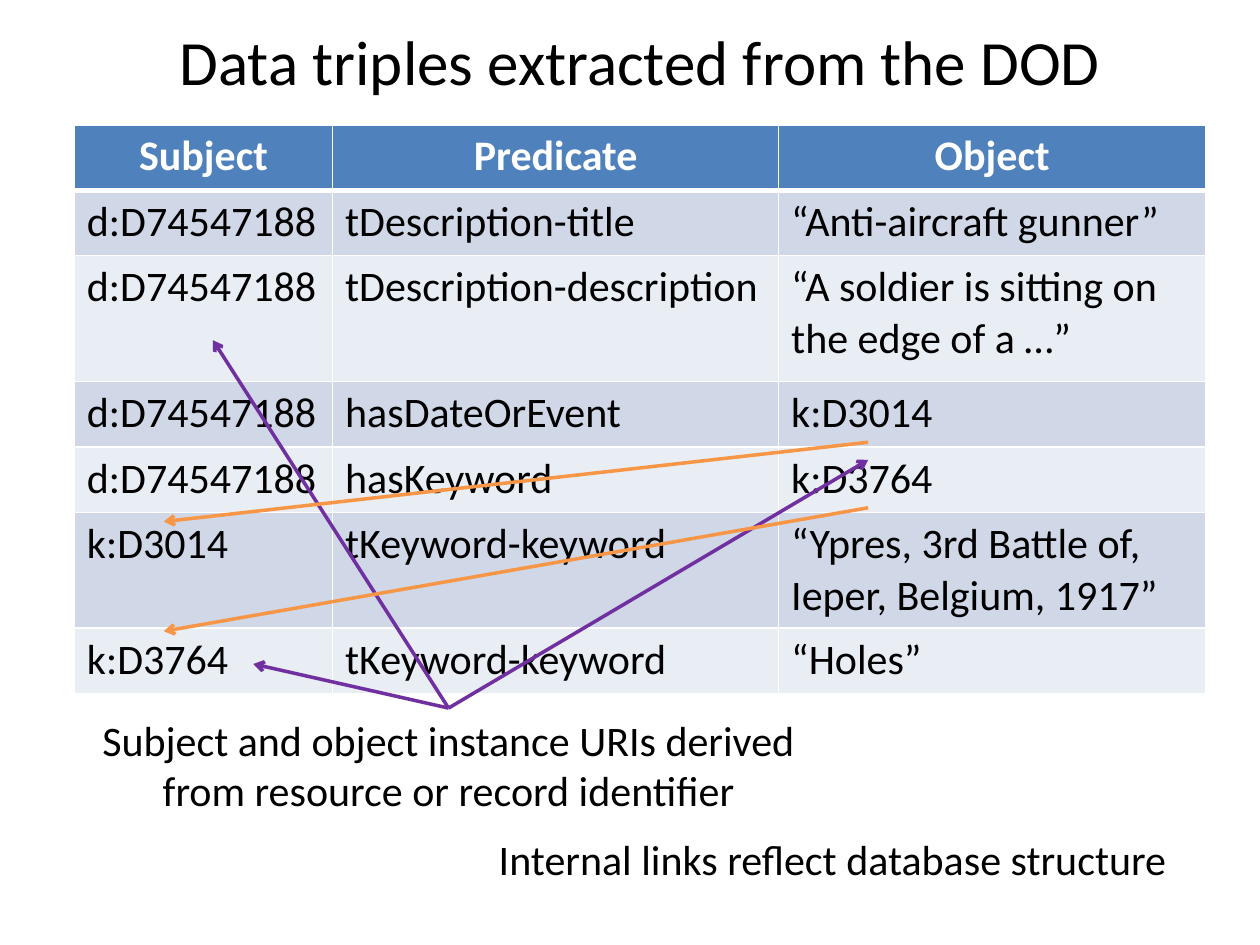
import pptx
import pptx.util
import pptx.dml.color
import pptx.enum.shapes
import pptx.enum.text
import pptx.oxml
import pptx.oxml.ns

Inches = pptx.util.Inches
Pt = pptx.util.Pt
RGBColor = pptx.dml.color.RGBColor
Align = pptx.enum.text.PP_ALIGN

WHITE = RGBColor(0xFF, 0xFF, 0xFF)
BLACK = RGBColor(0, 0, 0)
BLUE = RGBColor(0x4F, 0x81, 0xBD)
BANDS = (RGBColor(0xD0, 0xD8, 0xE8), RGBColor(0xE9, 0xED, 0xF4))
PURPLE = RGBColor(0x70, 0x30, 0xA0)
ORANGE = RGBColor(0xF7, 0x96, 0x46)
FONT = "Calibri"

WIDTHS = (2.05, 3.54, 3.39)
HEIGHTS = (0.52, 0.52, 1, 0.52, 0.52, 0.52, 0.52)
ITEM = "d:D74547188"
ROWS = (
    ("Subject", "Predicate", "Object"),
    (ITEM, "tDescription-title", "“Anti-aircraft gunner”"),
    (ITEM, "tDescription-description", "“A soldier is sitting on the edge of a …”"),
    (ITEM, "hasDateOrEvent", "k:D3014"),
    (ITEM, "hasKeyword", "k:D3764"),
    ("k:D3014", "tKeyword-keyword", "“Ypres, 3rd Battle of, Ieper, Belgium, 1917”"),
    ("k:D3764", "tKeyword-keyword", "“Holes”"),
)


def write(frame, text, size, color=BLACK, align=Align.LEFT, bold=False):
    par = frame.paragraphs[0]
    par.alignment = align
    run = par.add_run()
    run.text = text
    font = run.font
    font.name, font.size, font.bold = FONT, Pt(size), bold
    font.color.rgb = color


def add_text(slide, box, text, size, align=Align.CENTER, wrap=True):
    shape = slide.shapes.add_textbox(*map(Inches, box))
    frame = shape.text_frame
    frame.word_wrap = wrap
    frame.auto_size = pptx.enum.text.MSO_AUTO_SIZE.SHAPE_TO_FIT_TEXT
    write(frame, text, size, align=align)


def add_edges(cell, base):
    """White rules round a cell; base is the width of the bottom one."""
    props = cell._tc.get_or_add_tcPr()
    for side, width in (("L", 1), ("R", 1), ("T", 1), ("B", base)):
        props.append(pptx.oxml.parse_xml(
            f'<a:ln{side} {pptx.oxml.ns.nsdecls("a")} w="{Pt(width)}">'
            f'<a:solidFill><a:srgbClr val="{WHITE}"/></a:solidFill></a:ln{side}>'))


def add_triples(slide, box):
    frame = slide.shapes.add_table(len(ROWS), len(WIDTHS), *map(Inches, box))
    table = frame.table
    for col, width in zip(table.columns, WIDTHS):
        col.width = Inches(width)
    for r, words in enumerate(ROWS):
        table.rows[r].height = Inches(HEIGHTS[r])
        head = r == 0
        for c, word in enumerate(words):
            cell = table.cell(r, c)
            add_edges(cell, 3 if head else 1)
            cell.fill.solid()
            cell.fill.fore_color.rgb = BLUE if head else BANDS[(r - 1) % 2]
            write(cell.text_frame, word, 24, WHITE if head else BLACK,
                  Align.CENTER if head else Align.LEFT, head)


def add_arrow(slide, start, end, color):
    line = slide.shapes.add_connector(
        pptx.enum.shapes.MSO_CONNECTOR.STRAIGHT, *map(Inches, start + end))
    line.line.color.rgb = color
    line.line.width = Pt(2)
    space = pptx.oxml.ns.nsdecls("a")
    line.line._get_or_add_ln().append(
        pptx.oxml.parse_xml(f'<a:tailEnd {space} type="arrow"/>'))
    line._element.spPr.append(pptx.oxml.parse_xml(f"<a:effectLst {space}/>"))


def add_links(slide, box):
    """Arrows over the table, as offsets from the corner of its box."""
    left, top = box[:2]
    hub = (2.97, 4.63)
    links = (
        (hub, (1.1, 1.71), PURPLE),
        (hub, (6.3, 2.66), PURPLE),
        (hub, (1.42, 4.28), PURPLE),
        ((6.3, 2.52), (0.71, 3.15), ORANGE),
        ((6.3, 3.04), (0.71, 4.02), ORANGE),
    )
    for start, end, color in links:
        add_arrow(slide, (left + start[0], top + start[1]),
                  (left + end[0], top + end[1]), color)


def main():
    deck = pptx.Presentation()
    deck.slide_width, deck.slide_height = Inches(10), Inches(7.5)
    slide = deck.slides.add_slide(deck.slide_layouts[6])

    # Table and title
    grid = (0.59, 0.99, sum(WIDTHS), sum(HEIGHTS))
    add_triples(slide, grid)
    add_text(slide, (1.18, 0.13, 7.8, 0.71),
             "Data triples extracted from the DOD", 36)

    # Remarks below the table
    add_text(slide, (0.49, 5.62, 6.14, 0.91),
             "Subject and object instance URIs derived "
             "from resource or record identifier", 24)
    add_text(slide, (3.86, 6.57, 5.55, 0.5),
             "Internal links reflect database structure", 24, Align.LEFT, False)

    # Arrows between identifiers
    add_links(slide, grid)
    deck.save("out.pptx")


if __name__ == "__main__":
    main()
